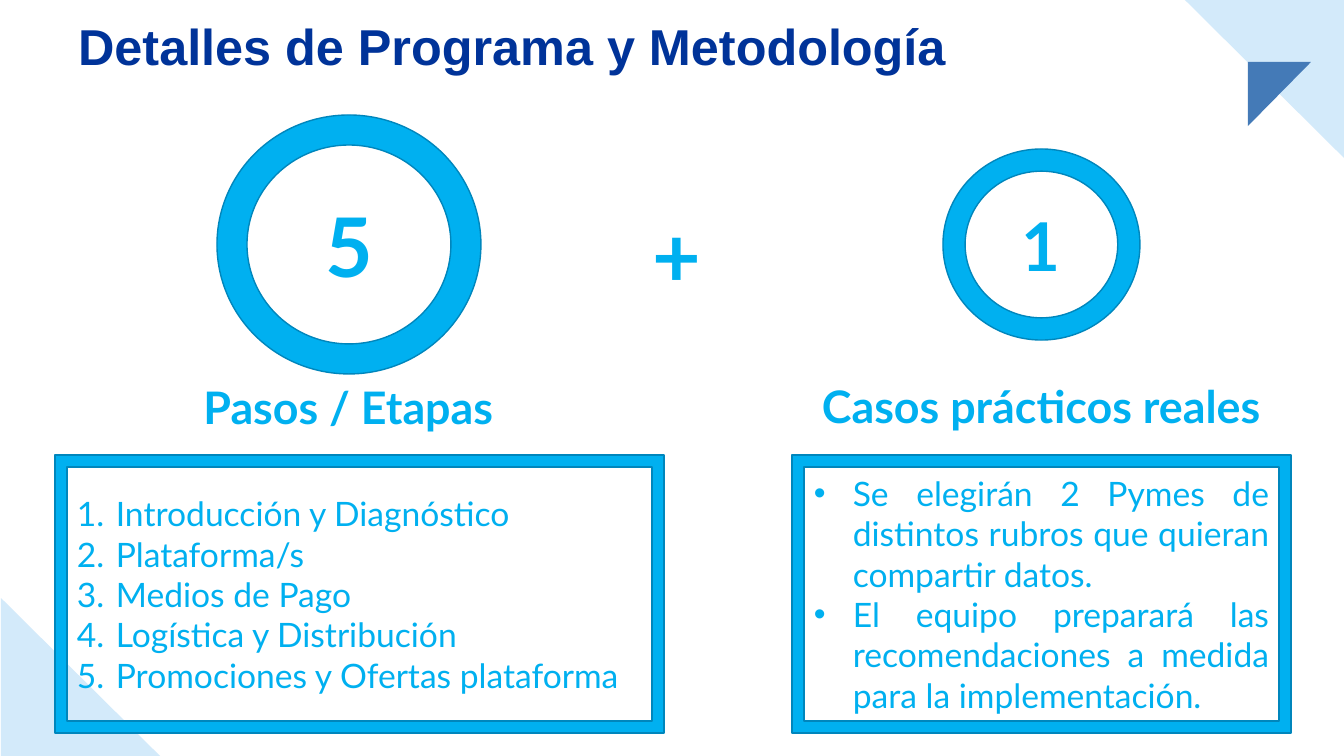
"""Build the programme and methodology slide."""
import pptx
import pptx.dml.color
import pptx.enum.shapes
import pptx.enum.text
import pptx.oxml.ns
import pptx.util
from lxml import etree

RGB = pptx.dml.color.RGBColor
SHAPE = pptx.enum.shapes.MSO_SHAPE
ALIGN = pptx.enum.text.PP_ALIGN
ANCHOR = pptx.enum.text.MSO_ANCHOR
AUTO = pptx.enum.text.MSO_AUTO_SIZE

SKY = RGB(0x00, 0xB0, 0xF0)
EDGE = RGB(0x00, 0x86, 0xBC)
NAVY = RGB(0x00, 0x33, 0x99)
PALE = RGB(0xD3, 0xEA, 0xFA)
STEEL = RGB(0x44, 0x7A, 0xB7)
SCALE = 914400 / 100.8


def px(*lengths):
    return [pptx.util.Emu(round(n * SCALE)) for n in lengths]


def write(sp, lines, size, align, name="Lato", color=SKY, bold=True):
    tf = sp.text_frame
    for i, line in enumerate(lines):
        p = tf.paragraphs[0] if i == 0 else tf.add_paragraph()
        p.alignment = align
        r = p.add_run()
        r.text = line
        fmt = {"name": name, "size": pptx.util.Pt(size), "bold": bold}
        for key, value in fmt.items():
            setattr(r.font, key, value)
        r.font.color.rgb = color
    return tf


prs = pptx.Presentation()
prs.slide_width, prs.slide_height = px(1344, 756)
slide = prs.slides.add_slide(prs.slide_layouts[5])
shapes = slide.shapes

corners = [
    ([(1185, 0), (1344, 0), (1344, 158)], PALE),
    ([(1248, 126), (1248, 62), (1311, 62)], STEEL),
    ([(160, 756), (1, 756), (1, 598)], PALE),
]
for points, color in corners:
    fb = shapes.build_freeform(*points[0], scale=SCALE)
    fb.add_line_segments(points[1:], close=True)
    sp = fb.convert_to_shape()
    sp.shadow.inherit = False
    sp.fill.solid()
    sp.fill.fore_color.rgb = color
    sp.line.fill.background()

title = shapes.title
title.left, title.top, title.width, title.height = px(68, 16, 897, 66)
tf = write(title, ["Detalles de Programa y Metodología"], 36, ALIGN.LEFT, "Arial", NAVY)
tf.paragraphs[0].line_spacing = 0.9
for key, value in {"word_wrap": False, "vertical_anchor": ANCHOR.BOTTOM,
                   "auto_size": AUTO.SHAPE_TO_FIT_TEXT}.items():
    setattr(tf, key, value)

steps = [
    "Introducción y Diagnóstico",
    "Plataforma/s",
    "Medios de Pago",
    "Logística y Distribución",
    "Promociones y Ofertas plataforma",
]
cases = [
    "Se elegirán 2 Pymes de distintos rubros que quieran compartir datos.",
    "El equipo preparará las recomendaciones a medida para la implementación.",
]
panels = [
    (SHAPE.DONUT, (217, 115, 264, 259), 0.116, ["5"], 58.7, ALIGN.CENTER, None),
    (SHAPE.DONUT, (943, 149, 197, 191), 0.116, ["1"], 48, ALIGN.CENTER, None),
    (SHAPE.FRAME, (55, 455, 609, 278), 0.043, steps, 24, ALIGN.LEFT,
     ("buAutoNum", {"type": "arabicPeriod"})),
    (SHAPE.FRAME, (792, 455, 499, 278), 0.043, cases, 24, ALIGN.JUSTIFY,
     ("buChar", {"char": "•"})),
]
for kind, box, ratio, lines, size, align, bullet in panels:
    sp = shapes.add_shape(kind, *px(*box))
    sp.adjustments[0] = ratio
    sp.shadow.inherit = False
    sp.fill.solid()
    sp.fill.fore_color.rgb = SKY
    sp.line.color.rgb = EDGE
    sp.line.width = pptx.util.Pt(1)
    tf = write(sp, lines, size, align, bold=bullet is None)
    tf.vertical_anchor = ANCHOR.MIDDLE
    if bullet:
        tag, attrs = bullet
        indent, = px(39)
        for p in tf.paragraphs:
            pPr = p._p.get_or_add_pPr()
            pPr.set("marL", str(indent))
            pPr.set("indent", str(-indent))
            font = etree.SubElement(pPr, pptx.oxml.ns.qn("a:buFont"))
            font.set("typeface", "Lato" if tag == "buAutoNum" else "Arial")
            etree.SubElement(pPr, pptx.oxml.ns.qn("a:" + tag), attrs)

labels = [
    ("Pasos / Etapas", (145, 375, 407, 65), 32, True),
    ("Casos prácticos reales", (792, 374, 499, 65), 32, True),
    ("+", (636, 199, 81, 112), 60, False),
]
for text, box, size, wrap in labels:
    sp = shapes.add_textbox(*px(*box))
    tf = write(sp, [text], size, ALIGN.CENTER)
    tf.word_wrap = wrap
    tf.auto_size = AUTO.SHAPE_TO_FIT_TEXT

prs.save("out.pptx")
